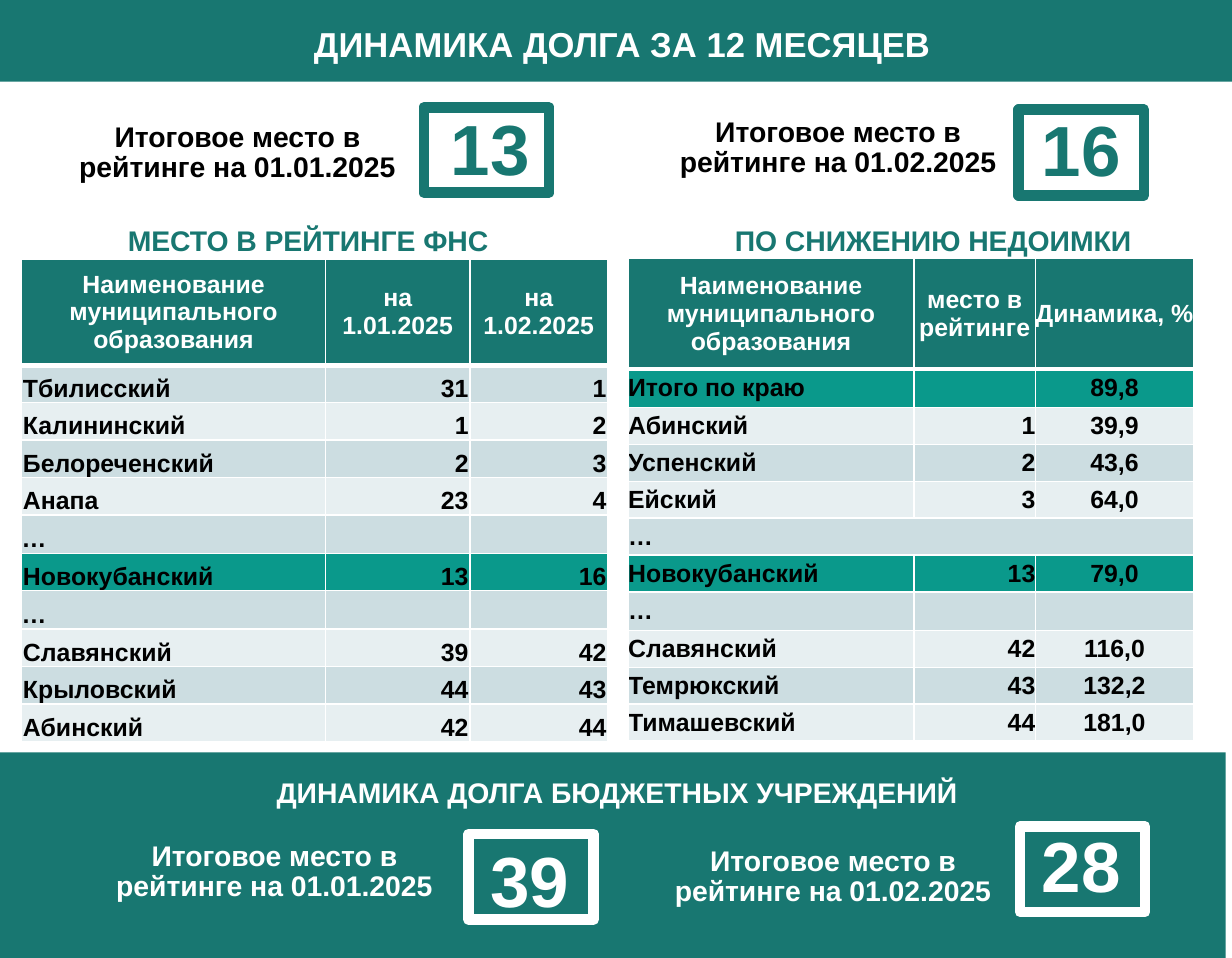
import pptx
import pptx.util
import pptx.dml.color
import pptx.enum.shapes
import pptx.enum.text
import pptx.oxml
import pptx.oxml.ns

Inches = pptx.util.Inches
Pt = pptx.util.Pt
RGBColor = pptx.dml.color.RGBColor
ALIGN = pptx.enum.text.PP_ALIGN
ANCHOR = pptx.enum.text.MSO_ANCHOR
RECT = pptx.enum.shapes.MSO_SHAPE.RECTANGLE

FONT = "Arial"
TEAL = RGBColor(0x18, 0x77, 0x71)
HIGHLIGHT = RGBColor(0x0A, 0x99, 0x8B)
BAND_DARK = RGBColor(0xCC, 0xDD, 0xE1)
BAND_LIGHT = RGBColor(0xE7, 0xEF, 0xF1)
WHITE = RGBColor(0xFF, 0xFF, 0xFF)
BLACK = RGBColor(0, 0, 0)

PLACE_JAN = "Итоговое место в рейтинге на 01.01.2025"
PLACE_FEB = "Итоговое место в рейтинге на 01.02.2025"
NAME_HEADER = "Наименование муниципального образования"
TABLE_HEIGHT = 3.76

RATING_ROWS = [
    (NAME_HEADER, "на 1.01.2025", "на 1.02.2025"),
    ("Тбилисский", "31", "1"),
    ("Калининский", "1", "2"),
    ("Белореченский", "2", "3"),
    ("Анапа", "23", "4"),
    ("…", "", ""),
    ("Новокубанский", "13", "16"),
    ("…", "", ""),
    ("Славянский", "39", "42"),
    ("Крыловский", "44", "43"),
    ("Абинский", "42", "44"),
]
ARREARS_ROWS = [
    (NAME_HEADER, "место в рейтинге", "Динамика, %"),
    ("Итого по краю", "", "89,8"),
    ("Абинский", "1", "39,9"),
    ("Успенский", "2", "43,6"),
    ("Ейский", "3", "64,0"),
    ("…", "", ""),
    ("Новокубанский", "13", "79,0"),
    ("…", "", ""),
    ("Славянский", "42", "116,0"),
    ("Темрюкский", "43", "132,2"),
    ("Тимашевский", "44", "181,0"),
]


def set_text(tf, text, size, color, align):
    tf.text = text
    p = tf.paragraphs[0]
    p.alignment = align
    for r in p.runs:
        r.font.name = FONT
        r.font.size = Pt(size)
        r.font.bold = True
        r.font.color.rgb = color
    return p


def add_band(slide, *box):
    sp = slide.shapes.add_shape(RECT, *map(Inches, box))
    sp.shadow.inherit = False
    sp.fill.solid()
    sp.fill.fore_color.rgb = TEAL
    sp.line.fill.background()


def add_caption(slide, text, left, top, width, color, size=16):
    box = map(Inches, (left, top, width, 0.64))
    tf = slide.shapes.add_textbox(*box).text_frame
    tf.word_wrap = True
    tf.vertical_anchor = ANCHOR.MIDDLE
    tf.margin_left = tf.margin_right = Inches(0.07)
    tf.margin_top = tf.margin_bottom = Inches(0.04)
    set_text(tf, text, size, color, ALIGN.CENTER).line_spacing = 0.9


def add_place(slide, number, color, text_at, frame_at):
    """Large place number inside an outlined frame."""
    box = map(Inches, (*text_at, 0.92, 0.77))
    tf = slide.shapes.add_textbox(*box).text_frame
    tf.word_wrap = True
    set_text(tf, number, 40, color, ALIGN.CENTER)
    sp = slide.shapes.add_shape(RECT, *map(Inches, (*frame_at, 0.98, 0.67)))
    sp.shadow.inherit = False
    sp.fill.background()
    sp.line.color.rgb = color
    sp.line.width = Pt(6)


def set_borders(cell, top, bottom):
    tc_pr = cell._tc.get_or_add_tcPr()
    for side, width in (("L", 1), ("R", 1), ("T", top), ("B", bottom)):
        tc_pr.append(pptx.oxml.parse_xml(
            f'<a:ln{side} {pptx.oxml.ns.nsdecls("a")} w="{Pt(width)}">'
            f'<a:solidFill><a:srgbClr val="{WHITE}"/></a:solidFill></a:ln{side}>'))


def row_fill(index, name):
    if index == 0:
        return TEAL
    if name in ("Новокубанский", "Итого по краю"):
        return HIGHLIGHT
    return BAND_DARK if index % 2 else BAND_LIGHT


def add_rating_table(slide, rows, left, top, widths, header_height,
                     aligns, anchor, margin):
    box = map(Inches, (left, top, sum(widths), TABLE_HEIGHT))
    table = slide.shapes.add_table(len(rows), len(widths), *box).table
    table.first_row = table.horz_banding = False
    for column, width in zip(table.columns, widths):
        column.width = Inches(width)
    body_height = (TABLE_HEIGHT - header_height) / (len(rows) - 1)
    for i, values in enumerate(rows):
        header = i == 0
        table.rows[i].height = Inches(header_height if header else body_height)
        for j, text in enumerate(values):
            cell = table.cell(i, j)
            inset = Inches(margin if text and text != "…" and not header else 0)
            cell.margin_left = cell.margin_right = cell.margin_top = inset
            cell.margin_bottom = 0
            cell.vertical_anchor = ANCHOR.MIDDLE if header else anchor
            set_text(cell.text_frame, text, 14, WHITE if header else BLACK,
                     ALIGN.CENTER if header else aligns[j])
            set_borders(cell, 3 if i == 1 else 1, 3 if header else 1)
            cell.fill.solid()
            cell.fill.fore_color.rgb = row_fill(i, values[0])
    return table


def main():
    prs = pptx.Presentation()
    prs.slide_width = Inches(9.65)
    prs.slide_height = Inches(7.5)
    slide = prs.slides.add_slide(prs.slide_layouts[6])

    # Bands and title
    add_band(slide, -0.05, 5.89, 9.65, 1.65)
    add_band(slide, 0, -0.02, 9.65, 0.66)
    add_caption(slide, "ДИНАМИКА ДОЛГА ЗА 12 МЕСЯЦЕВ", 0, 0.04, 9.75, WHITE, 19.5)

    # Overall places
    add_caption(slide, PLACE_JAN, 0.37, 0.88, 2.98, BLACK)
    add_place(slide, "13", TEAL, (3.38, 0.77), (3.32, 0.84))
    add_caption(slide, PLACE_FEB, 5.11, 0.84, 2.91, BLACK)
    add_place(slide, "16", TEAL, (8.01, 0.78), (7.98, 0.86))

    # Tables with their headings
    add_rating_table(slide, RATING_ROWS, 0.17, 2.03, (2.38, 1.13, 1.08), 0.83,
                     (ALIGN.LEFT, ALIGN.RIGHT, ALIGN.RIGHT), ANCHOR.BOTTOM, 0.01)
    arrears = add_rating_table(
        slide, ARREARS_ROWS, 4.92, 2.02, (2.24, 0.95, 1.24), 0.87,
        (ALIGN.LEFT, ALIGN.RIGHT, ALIGN.CENTER), ANCHOR.MIDDLE, 0)
    arrears.cell(5, 0).merge(arrears.cell(5, 2))
    add_caption(slide, "МЕСТО В РЕЙТИНГЕ ФНС", 0.53, 1.58, 3.77, TEAL)
    add_caption(slide, "ПО СНИЖЕНИЮ НЕДОИМКИ", 4.76, 1.58, 5.1, TEAL)

    # Budget institutions
    add_caption(slide, "ДИНАМИКА ДОЛГА БЮДЖЕТНЫХ УЧРЕЖДЕНИЙ", 0.05, 5.9, 9.57, WHITE)
    add_caption(slide, PLACE_JAN, 0.66, 6.51, 2.98, WHITE)
    add_place(slide, "39", WHITE, (3.69, 6.5), (3.67, 6.53))
    add_caption(slide, PLACE_FEB, 5.07, 6.55, 2.91, WHITE)
    add_place(slide, "28", WHITE, (8.01, 6.38), (7.99, 6.47))

    prs.save("out.pptx")


if __name__ == "__main__":
    main()
